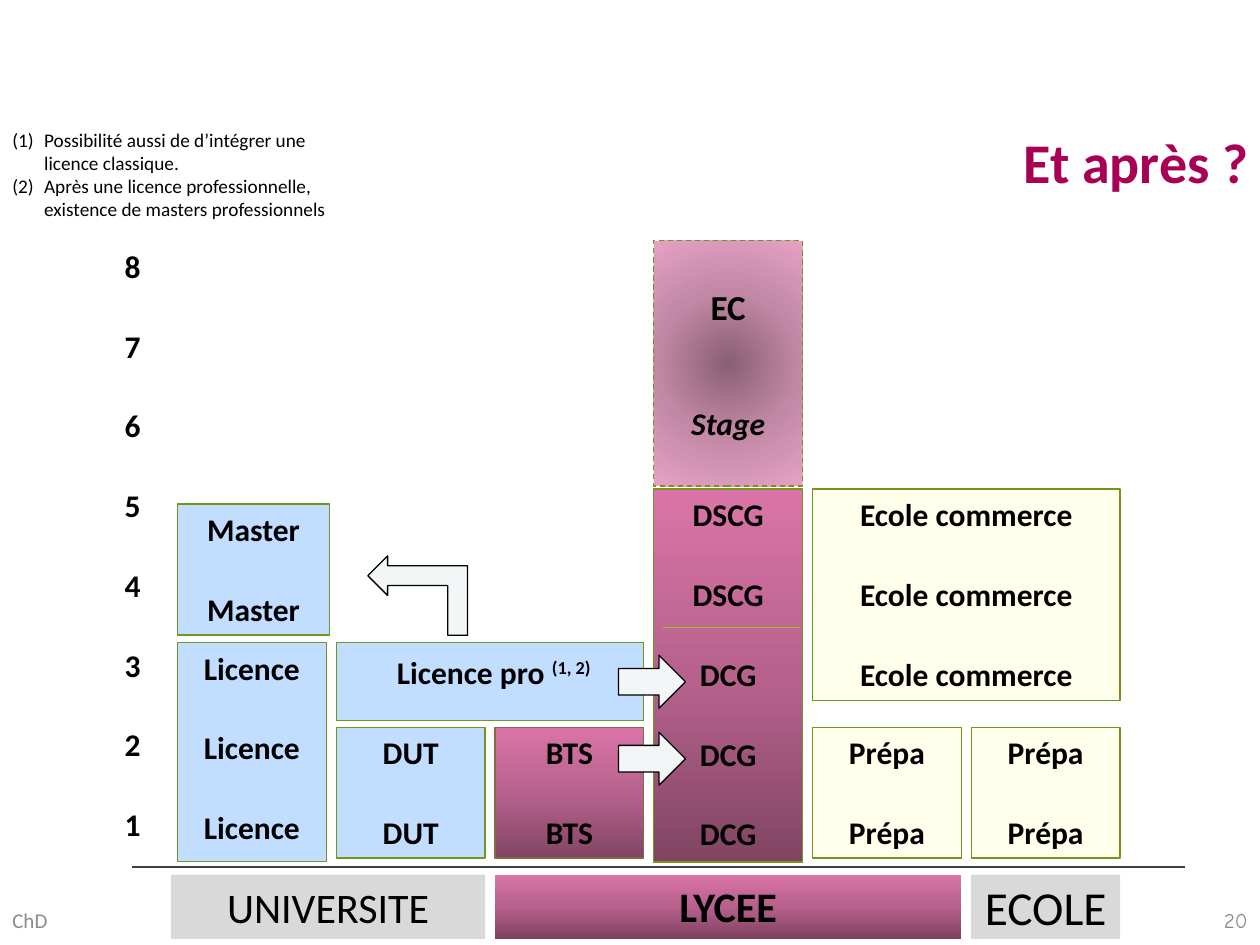
"""Build the slide showing study paths after the baccalauréat, year by year."""
from lxml import etree
from pptx import Presentation
from pptx import util as u
from pptx.dml import color
from pptx.enum import dml, shapes, text
from pptx.oxml import ns

BLUE, CREAM, GREY, PALE = "C1DDFF", "FFFFEB", "D9D9D9", "F3F6F6"
GREEN, BROWN, BLACK = "72951A", "826A47", "000000"
PLUM = ("814563", "B7628D", "DA74A7")
PLUM_BASE = ("7E4160", "B7618C", "DA74A7")
ROSE = ("896074", "C288A5", "E6A2C4")
UPWARD = '<a:lin ang="16200000" scaled="0"/>'
RADIAL = '<a:path path="circle"><a:fillToRect l="50000" t="50000" r="50000" b="50000"/></a:path>'

LEFT, PITCH, GAP = 3.58, 3.2, 0.2
YEARS = [str(n) for n in range(8, 0, -1)]
NOTES = [
    "Possibilité aussi de d’intégrer une licence classique.",
    "Après une licence professionnelle, existence de masters professionnels",
]
BASES = [
    ("UNIVERSITE", -0.04, 2.04, GREY, 24, False, "MIDDLE"),
    ("LYCEE", 2, 3, PLUM_BASE, 24, True, "TOP"),
    ("ECOLE", 5, 1, GREY, 27, False, "MIDDLE"),
]
BLOCKS = [
    (["DUT"] * 2, 1, 1, 14.66, 2.64, BLUE, GREEN),
    (["BTS"] * 2, 2, 1, 14.66, 2.64, PLUM, BROWN),
    ([], 1, 2, 12.95, 1.57, BLUE, GREEN),
    (["Prépa"] * 2, 4, 1, 14.66, 2.64, CREAM, GREEN),
    (["Prépa"] * 2, 5, 1, 14.66, 2.64, CREAM, GREEN),
    (["Ecole commerce"] * 3, 4, 2, 9.86, 4.27, CREAM, GREEN),
    (["DSCG"] * 2 + ["DCG"] * 3, 3, 1, 9.86, 7.52, PLUM, GREEN),
    (["Master"] * 2, 0, 1.02, 10.16, 2.64, BLUE, GREEN),
    (["Licence"] * 3, 0, 1, 12.95, 4.42, BLUE, GREEN),
]
ARROWS = [
    ("BENT_UP_ARROW", 7.62, 11, 1.6, 2.01, 270),
    ("RIGHT_ARROW", 12.47, 14.76, 1.35, 1.07, 0),
    ("RIGHT_ARROW", 12.47, 13.21, 1.35, 1.07, 0),
]


def rgb(value):
    return color.RGBColor.from_string(value)


def column(col, span):
    return LEFT + PITCH * col, PITCH * span - GAP


def add_run(p, words, size, bold, ink, font):
    r = p.add_run()
    r.text = words
    r.font.size, r.font.bold, r.font.name = u.Pt(size), bold, font
    r.font.color.rgb = rgb(ink)
    return r


def write(s, lines, size=18, bold=False, ink=BLACK, font="Calibri",
          align="CENTER", anchor="TOP", space=0):
    tf = s.text_frame
    tf.word_wrap = True
    tf.vertical_anchor = text.MSO_ANCHOR[anchor]
    for i, line in enumerate(lines):
        p = tf.add_paragraph() if i else tf.paragraphs[0]
        p.alignment = text.PP_ALIGN[align]
        p.space_before = p.space_after = u.Pt(space)
        add_run(p, line, size, bold, ink, font)
    return tf


def label(slide, x, y, w, h, lines, **fmt):
    s = slide.shapes.add_textbox(u.Cm(x), u.Cm(y), u.Cm(w), u.Cm(h))
    return write(s, lines, **fmt)


def shape(slide, x, y, w, h, fill, line=None, kind="RECTANGLE", shade=UPWARD):
    s = slide.shapes.add_shape(shapes.MSO_SHAPE[kind], u.Cm(x), u.Cm(y), u.Cm(w), u.Cm(h))
    s.shadow.inherit = False
    if isinstance(fill, str):
        s.fill.solid()
        s.fill.fore_color.rgb = rgb(fill)
    else:
        stops = "".join(f'<a:gs pos="{i * 50000}"><a:srgbClr val="{c}"/></a:gs>'
                        for i, c in enumerate(fill))
        s._element.spPr.find(ns.qn("a:prstGeom")).addnext(etree.fromstring(
            f'<a:gradFill {ns.nsdecls("a")} rotWithShape="1">'
            f"<a:gsLst>{stops}</a:gsLst>{shade}</a:gradFill>"))
    if line:
        s.line.color.rgb = rgb(line)
        s.line.width = u.Pt(0.75)
    else:
        s.line.fill.background()
    return s


def rule(slide, x1, x2, y, ink, width):
    s = slide.shapes.add_connector(shapes.MSO_CONNECTOR.STRAIGHT,
                                   u.Cm(x1), u.Cm(y), u.Cm(x2), u.Cm(y))
    s.line.color.rgb = rgb(ink)
    s.line.width = u.Pt(width)
    etree.SubElement(s._element.spPr, ns.qn("a:effectLst"))


def main():
    prs = Presentation()
    prs.slide_width, prs.slide_height = u.Cm(25.4), u.Cm(19.05)
    slide = prs.slides.add_slide(prs.slide_layouts[6])

    label(slide, 0, 18.03, 8.05, 1.02, ["ChD"], size=12, ink="8C8C8C",
          align="LEFT", anchor="MIDDLE")
    label(slide, 19.48, 18.03, 5.92, 1.02, ["20"], size=12, ink="898989",
          font="Comic Neue", align="RIGHT", anchor="MIDDLE")
    label(slide, 19.58, 2.44, 5.84, 1.96, ["Et après ?"], size=32, bold=True,
          ink="A80054", align="RIGHT")
    rule(slide, 2.67, 23.88, 17.48, "404040", 1.5)

    for name, col, span, fill, size, bold, anchor in BASES:
        x, w = column(col, span)
        s = shape(slide, x, 17.63, w, 1.3, fill)
        write(s, [name], size=size, bold=bold, anchor=anchor)

    label(slide, 2.18, 4.85, 0.99, 12.4, YEARS, bold=True, space=12)
    for lines, col, span, y, h, fill, line in BLOCKS:
        x, w = column(col, span)
        write(shape(slide, x, y, w, h, fill, line), lines, bold=True, space=12)
    rule(slide, 13.36, 16.13, 12.65, "96C71E", 0.75)

    s = shape(slide, 7.67, 13.03, 4.57, 1.02, BLUE)
    tf = write(s, ["Licence pro "], bold=True, space=12)
    tf.word_wrap = False
    r = add_run(tf.paragraphs[0], "(1, 2)", 18, True, BLACK, "Calibri")
    r.font._element.set("baseline", "30000")

    x, w = column(3, 1)
    s = shape(slide, x, 4.85, w, 4.95, ROSE, GREEN, shade=RADIAL)
    s.line.dash_style = dml.MSO_LINE.DASH
    tf = write(s, ["EC", "Stage"], bold=True)
    tf.margin_top = u.Cm(0.9)
    tf.paragraphs[0].runs[0].font.size = u.Pt(20)
    tf.paragraphs[1].space_before = u.Pt(44)
    tf.paragraphs[1].runs[0].font.italic = True

    for kind, x, y, w, h, turn in ARROWS:
        shape(slide, x, y, w, h, PALE, BLACK, kind).rotation = turn

    tf = label(slide, 0, 2.46, 7.52, 2.13, NOTES, size=11, align="LEFT")
    for p in tf.paragraphs:
        pPr = p._p.get_or_add_pPr()
        pPr.set("marL", str(u.Cm(0.64)))
        pPr.set("indent", str(-u.Cm(0.64)))
        etree.SubElement(pPr, ns.qn("a:buFont"), typeface="+mj-lt")
        etree.SubElement(pPr, ns.qn("a:buAutoNum"), type="arabicParenBoth")
    prs.save("out.pptx")


if __name__ == "__main__":
    main()
